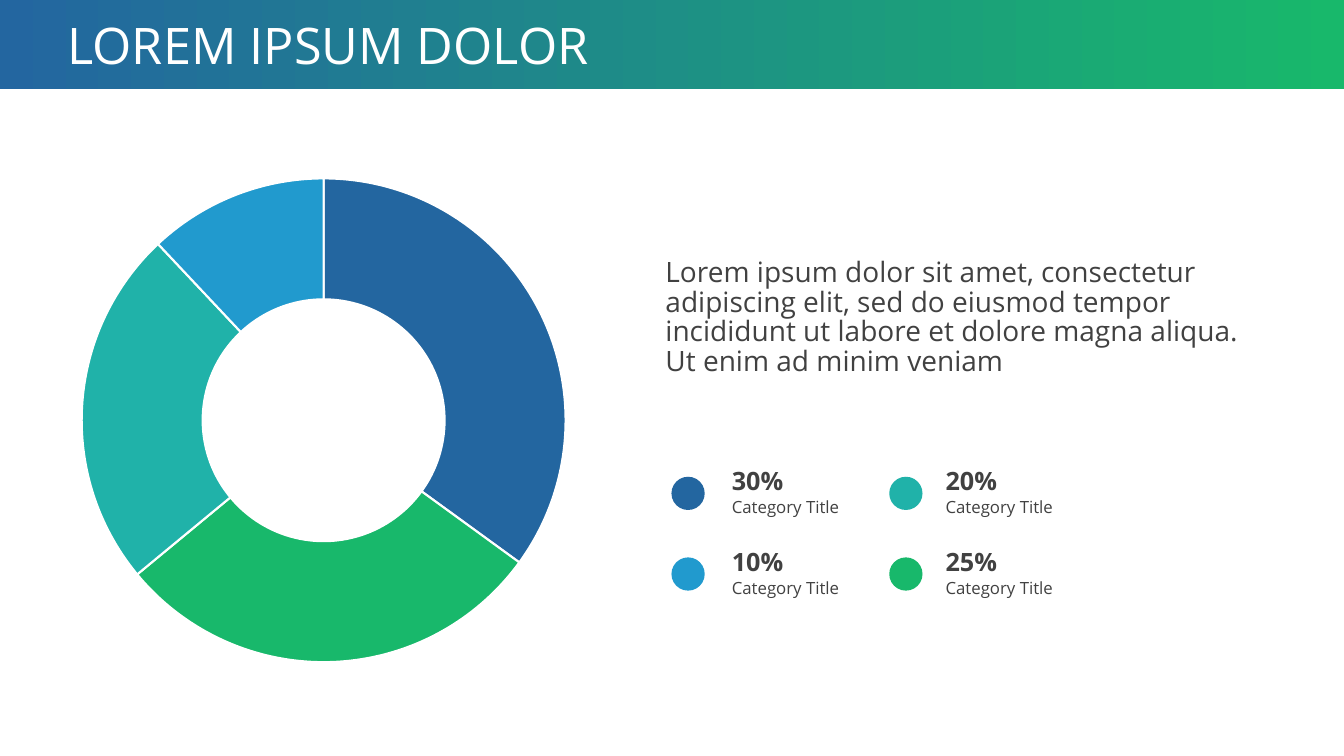
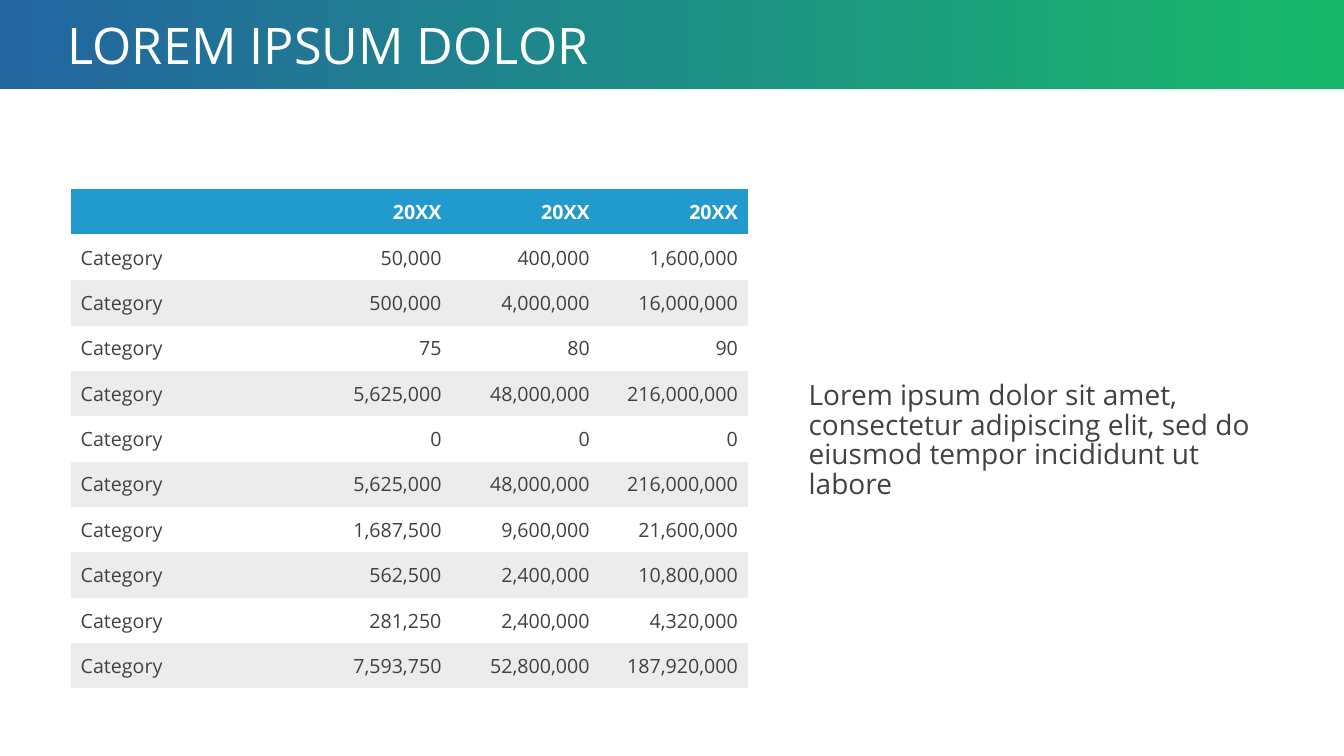
import lxml.etree
import pptx
import pptx.chart.data
import pptx.dml.color
import pptx.enum.chart
import pptx.enum.shapes
import pptx.enum.text
import pptx.oxml
import pptx.oxml.ns
import pptx.util

Inches, Pt = pptx.util.Inches, pptx.util.Pt
ALIGN = pptx.enum.text.PP_ALIGN
ANCHOR = pptx.enum.text.MSO_ANCHOR
SHAPE = pptx.enum.shapes.MSO_SHAPE
qn = pptx.oxml.ns.qn

# Content
TITLE = "LOREM IPSUM DOLOR"
DONUT_TEXT = (
    "Lorem ipsum dolor sit amet, consectetur adipiscing elit, sed do eiusmod tempor "
    "incididunt ut labore et dolore magna aliqua. Ut enim ad minim veniam"
)
TABLE_TEXT = (
    "Lorem ipsum dolor sit amet, consectetur adipiscing elit, sed do eiusmod tempor "
    "incididunt ut labore"
)
DONUT = [("1", 35, "blue"), ("2", 29, "green"), ("3", 24, "teal"), ("4", 12, "sky")]
LEGEND = [
    [("30%", "blue"), ("20%", "teal")],
    [("10%", "sky"), ("25%", "green")],
]
LEGEND_CAPTION = "Category Title"
HEADER = ["", "20XX", "20XX", "20XX"]
FIGURES = [
    ("50,000", "400,000", "1,600,000"),
    ("500,000", "4,000,000", "16,000,000"),
    ("75", "80", "90"),
    ("5,625,000", "48,000,000", "216,000,000"),
    ("0", "0", "0"),
    ("5,625,000", "48,000,000", "216,000,000"),
    ("1,687,500", "9,600,000", "21,600,000"),
    ("562,500", "2,400,000", "10,800,000"),
    ("281,250", "2,400,000", "4,320,000"),
    ("7,593,750", "52,800,000", "187,920,000"),
]
ROWS = [HEADER] + [["Category", *figures] for figures in FIGURES]

# Shared look
COLORS = {
    "blue": "2366A0", "green": "18B86B", "teal": "20B2A9", "sky": "219ACE",
    "text": "414141", "white": "FFFFFF", "stripe": "ECECEC",
}
FONT = "Open Sans"
STYLES = {
    "title": {"size": 36, "color": "white", "line_spacing": 0.85},
    "body": {"size": 20, "color": "text", "line_spacing": 0.88},
    "percent": {"size": 18, "color": "text", "line_spacing": 0.9, "bold": True},
    "caption": {"size": 12, "color": "text", "line_spacing": 0.9},
    "head": {"size": 14, "color": "white", "line_spacing": 1.0, "bold": True},
    "cell": {"size": 14, "color": "text", "line_spacing": 1.0},
}
NO_TABLE_STYLE = "{2D5ABB26-0587-4C30-8999-92F81FD0307C}"


def rgb(name):
    return pptx.dml.color.RGBColor.from_string(COLORS[name])


def paint(fill, name):
    fill.solid()
    fill.fore_color.rgb = rgb(name)


def place(shape, left, top, width, height):
    box = {"left": left, "top": top, "width": width, "height": height}
    for side, length in box.items():
        setattr(shape, side, Inches(length))


def write(frame, text, style, align=ALIGN.LEFT):
    look = STYLES[style]
    paragraph = frame.paragraphs[0]
    paragraph.text = text
    spacing = {"alignment": align, "line_spacing": look["line_spacing"],
               "space_before": Pt(0), "space_after": Pt(0)}
    for attribute, value in spacing.items():
        setattr(paragraph, attribute, value)
    for run in paragraph.runs:
        letters = {"name": FONT, "size": Pt(look["size"]), "bold": look.get("bold", False)}
        for attribute, value in letters.items():
            setattr(run.font, attribute, value)
        run.font.color.rgb = rgb(look["color"])


def prepare_layout(prs):
    """Put the gradient band and the title position on the layout."""
    layout = prs.slide_layouts[1]
    place(layout.placeholders[0], 0.57, -0.01, 12.26, 1)
    layout.placeholders[0].text_frame.vertical_anchor = ANCHOR.MIDDLE
    return layout


def add_band(slide, layout):
    band = slide.shapes.add_shape(SHAPE.RECTANGLE, 0, 0, Inches(13.33), Inches(0.88))
    band.shadow.inherit = False
    band.line.fill.background()
    band.fill.gradient()
    band.fill.gradient_angle = 0
    for stop, name in zip(band.fill.gradient_stops, ("blue", "green")):
        stop.color.rgb = rgb(name)
    layout.shapes.element.insert(2, band.element)


def add_slide(prs, layout, text, box, anchor):
    slide = prs.slides.add_slide(layout)
    write(slide.shapes.title.text_frame, TITLE, "title")
    body = slide.placeholders[1]
    place(body, *box)
    frame = body.text_frame
    frame.auto_size = pptx.enum.text.MSO_AUTO_SIZE.NONE
    frame.vertical_anchor = anchor
    properties = frame.paragraphs[0]._p.get_or_add_pPr()
    properties.set("marL", "0")
    properties.set("indent", "0")
    lxml.etree.SubElement(properties, qn("a:buNone"))
    write(frame, text, "body")
    return slide


# Doughnut slide
def add_donut(slide):
    data = pptx.chart.data.CategoryChartData()
    data.categories = [label for label, _, _ in DONUT]
    data.add_series("Series 1", [value for _, value, _ in DONUT])
    width, height, ring = 5.08, 5.18, 4.8
    chart = slide.shapes.add_chart(
        pptx.enum.chart.XL_CHART_TYPE.DOUGHNUT,
        Inches(0.67), Inches(1.58), Inches(width), Inches(height), data).chart
    chart.has_legend = False
    chart.has_title = False
    for attribute, value in {"name": "Calibri", "size": Pt(10)}.items():
        setattr(chart.font, attribute, value)
    chart.font.color.rgb = rgb("white")
    plot = chart.plots[0]
    plot.has_data_labels = False
    plot.vary_by_categories = True
    for index, (_, _, color) in enumerate(DONUT):
        segment = plot.series[0].points[index].format
        paint(segment.fill, color)
        segment.line.color.rgb = rgb("white")
        segment.line.width = Pt(1.5)

    # Hole size and a centred ring
    area = chart.element.find(".//" + qn("c:plotArea"))
    area.find(".//" + qn("c:holeSize")).set("val", "52")
    for old in area.findall(qn("c:layout")):
        area.remove(old)
    layout = lxml.etree.Element(qn("c:layout"))
    manual = lxml.etree.SubElement(layout, qn("c:manualLayout"))
    share_x, share_y = ring / width, ring / height
    settings = {
        "layoutTarget": "inner", "xMode": "edge", "yMode": "edge",
        "x": (1 - share_x) / 2, "y": (1 - share_y) / 2, "w": share_x, "h": share_y,
    }
    for tag, value in settings.items():
        lxml.etree.SubElement(manual, qn("c:" + tag)).set("val", str(value))
    area.insert(0, layout)


def add_label(slide, text, style, left, top):
    label = slide.shapes.add_textbox(Inches(left), Inches(top), Inches(1.38), Inches(0.32))
    label.text_frame.word_wrap = True
    label.text_frame.margin_top = Inches(0.03)
    write(label.text_frame, text, style)


def add_legend(slide):
    columns = [(6.66, 7.16), (8.82, 9.28)]
    for row, entries in enumerate(LEGEND):
        top = 4.62 + row * 0.8
        for (dot_left, text_left), (percent, color) in zip(columns, entries):
            dot = slide.shapes.add_shape(
                SHAPE.OVAL, Inches(dot_left), Inches(top + 0.11), Inches(0.33), Inches(0.33))
            dot.shadow.inherit = False
            dot.line.fill.background()
            paint(dot.fill, color)
            add_label(slide, percent, "percent", text_left, top)
            add_label(slide, LEGEND_CAPTION, "caption", text_left, top + 0.3)


# Table slide
def add_bottom_border(cell):
    border = lxml.etree.Element(qn("a:lnB"), w=str(Pt(2)))
    fill = lxml.etree.SubElement(border, qn("a:solidFill"))
    lxml.etree.SubElement(fill, qn("a:srgbClr"), val=COLORS["white"])
    cell._tc.get_or_add_tcPr().insert(0, border)


def add_figures(slide):
    row_height = 0.45
    frame = slide.shapes.add_table(
        len(ROWS), len(HEADER), Inches(0.7), Inches(1.88),
        Inches(6.72), Inches(row_height * len(ROWS)))
    table = frame.table
    table.horz_banding = False
    frame.element.find(".//" + qn("a:tableStyleId")).text = NO_TABLE_STYLE
    for column, width in zip(table.columns, [2.31] + [1.47] * 3):
        column.width = Inches(width)
    for r, values in enumerate(ROWS):
        table.rows[r].height = Inches(row_height)
        color = "sky" if r == 0 else "white" if r % 2 else "stripe"
        for c, value in enumerate(values):
            cell = table.cell(r, c)
            cell.vertical_anchor = ANCHOR.MIDDLE
            paint(cell.fill, color)
            write(cell.text_frame, value, "cell" if r else "head",
                  ALIGN.RIGHT if c else ALIGN.LEFT)
            if r == 0:
                add_bottom_border(cell)


def main():
    prs = pptx.Presentation()
    prs.slide_width, prs.slide_height = Inches(13.33), Inches(7.5)
    layout = prepare_layout(prs)

    donut_slide = add_slide(prs, layout, DONUT_TEXT, (6.5, 2.52, 6.08, 1.72), ANCHOR.TOP)
    add_band(donut_slide, layout)
    add_donut(donut_slide)
    add_legend(donut_slide)

    table_slide = add_slide(prs, layout, TABLE_TEXT, (7.92, 1.91, 4.83, 4.93), ANCHOR.MIDDLE)
    add_figures(table_slide)

    prs.save("out.pptx")


if __name__ == "__main__":
    main()
